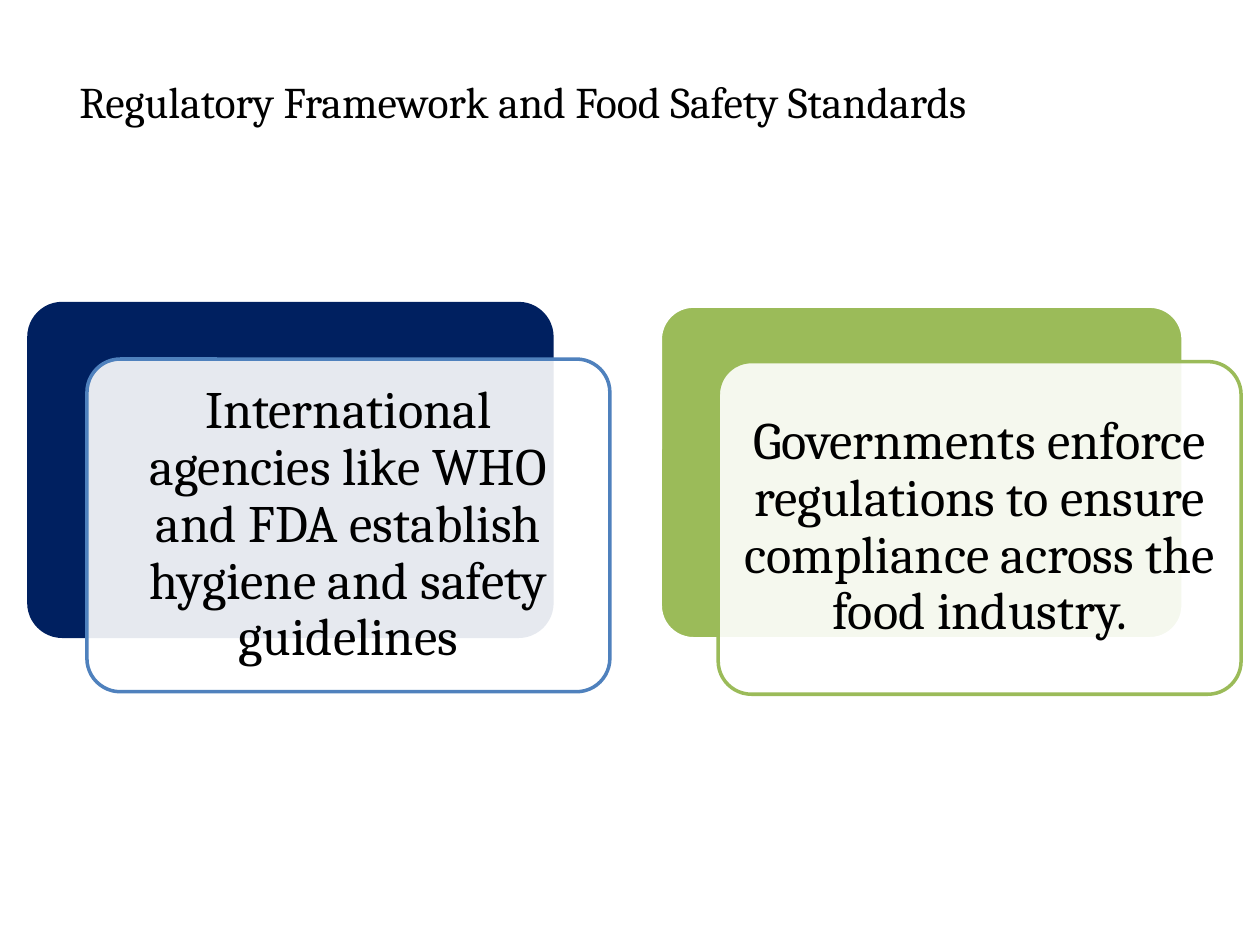
from lxml import etree
from pptx import Presentation
from pptx import util as u
from pptx.dml.color import RGBColor
from pptx.enum import shapes, text
from pptx.oxml.ns import qn

BLACK = RGBColor(0x00, 0x00, 0x00)
WHITE = RGBColor(0xFF, 0xFF, 0xFF)
NAVY = RGBColor(0x00, 0x20, 0x60)
BLUE = RGBColor(0x4F, 0x81, 0xBD)
GREEN = RGBColor(0x9B, 0xBB, 0x59)

WIDTH, HEIGHT = 10, 7.5
CARD_SIZE = (4.15 / WIDTH, 2.64 / HEIGHT)
CARD_SHIFT = (0.46 / WIDTH, 0.44 / HEIGHT)


class SlideBuilder:
    """Holds the text style and the current slide; lengths are shares of the slide."""

    font = "Cambria"

    def __init__(self, deck):
        self.deck = deck
        self.page = deck.slides.add_slide(deck.slide_layouts[5])

    def place(self, left, top, width, height):
        across, down = self.deck.slide_width, self.deck.slide_height
        return int(left * across), int(top * down), int(width * across), int(height * down)

    def add_words(self, frame, words, size):
        frame.word_wrap = True
        frame.vertical_anchor = text.MSO_ANCHOR.MIDDLE
        para = frame.paragraphs[0]
        para.alignment = text.PP_ALIGN.CENTER
        span = para.add_run()
        span.text = words
        span.font.name = self.font
        span.font.size = u.Pt(size)
        span.font.color.rgb = BLACK
        return para

    def title(self, words, *area):
        box = self.page.shapes.title
        box.left, box.top, box.width, box.height = self.place(*area)
        self.add_words(box.text_frame, words, 25)

    def panel(self, group, left, top, fill, line, opacity=100):
        box = group.shapes.add_shape(
            shapes.MSO_SHAPE.ROUNDED_RECTANGLE, *self.place(left, top, *CARD_SIZE))
        box.adjustments[0] = 0.1
        box.shadow.inherit = False
        box.fill.solid()
        box.fill.fore_color.rgb = fill
        box.line.color.rgb = line
        box.line.width = u.Pt(2)
        if opacity < 100:
            color = box.element.spPr.find(qn("a:solidFill"))[0]
            etree.SubElement(color, qn("a:alpha"), val=str(opacity * 1000))
        return box

    def card(self, left, top, words, back_fill, back_line, front_line):
        """A coloured panel with a translucent text panel shifted over it."""
        group = self.page.shapes.add_group_shape()
        self.panel(group, left, top, back_fill, back_line)
        front = self.panel(group, left + CARD_SHIFT[0], top + CARD_SHIFT[1],
                           WHITE, front_line, opacity=90)
        frame = front.text_frame
        frame.margin_left = frame.margin_right = u.Inches(0.12)
        frame.margin_top = frame.margin_bottom = u.Inches(0.12)
        self.add_words(frame, words, 30).line_spacing = 0.9


def main():
    deck = Presentation()
    deck.slide_width, deck.slide_height = u.Inches(WIDTH), u.Inches(HEIGHT)
    slide = SlideBuilder(deck)

    # Title
    slide.title("Regulatory Framework and Food Safety Standards",
                -0.35 / WIDTH, 0.18 / HEIGHT, 9 / WIDTH, 1.25 / HEIGHT)

    # Two cards: agencies and governments
    slide.card(0.23 / WIDTH, 2.41 / HEIGHT,
               "International agencies like WHO and FDA establish hygiene and safety guidelines",
               NAVY, NAVY, BLUE)
    slide.card(5.24 / WIDTH, 2.43 / HEIGHT,
               "Governments enforce regulations to ensure compliance across the food industry.",
               GREEN, WHITE, GREEN)

    deck.save("out.pptx")


if __name__ == "__main__":
    main()
